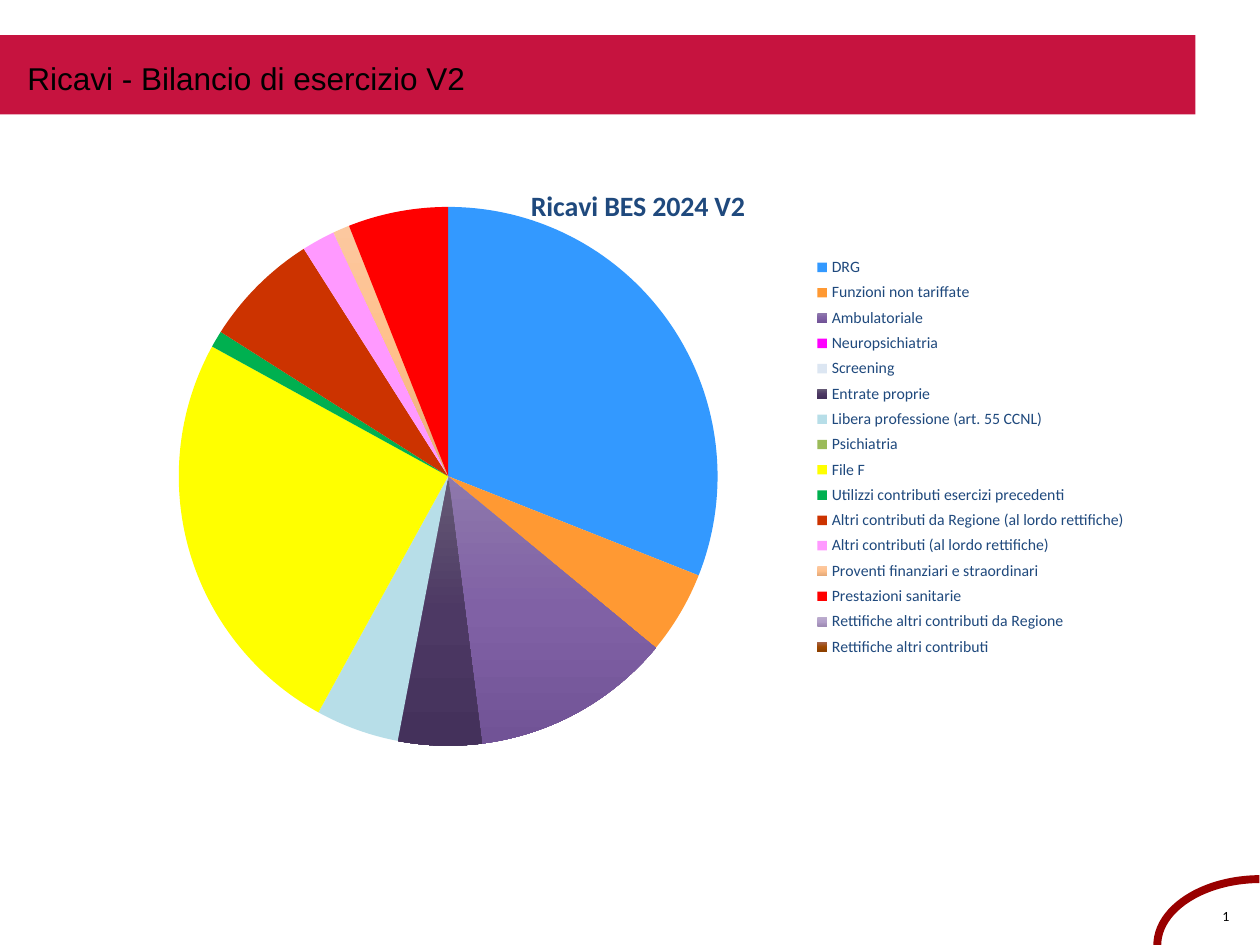
from lxml import etree
from pptx import Presentation
from pptx import util as u
from pptx.chart.data import CategoryChartData
from pptx.dml.color import RGBColor
from pptx.enum import chart as ch, shapes, text
from pptx.oxml import parse_xml
from pptx.oxml.ns import nsdecls, qn

COLOURS = {
    "banner": "C6133F",
    "arc": "990000",
    "text": "000000",
    "chart_text": "1F497D",
    "background": "FFFFFF",
}

# Category, value, slice colour (three colours make a vertical gradient)
REVENUES = [
    ("DRG", 31, "3399FF"),
    ("Funzioni non tariffate", 5, "FF9933"),
    ("Ambulatoriale", 12, ("8E78AC", "8061A5", "715396")),
    ("Neuropsichiatria", 0, "FF00FF"),
    ("Screening", 0, "DCE6F2"),
    ("Entrate proprie", 5, ("665B76", "4D3964", "44315B")),
    ("Libera professione (art. 55 CCNL)", 5, "B7DEE8"),
    ("Psichiatria", 0, "9BBB59"),
    ("File F", 25, "FFFF00"),
    ("Utilizzi contributi esercizi precedenti", 1, "00B050"),
    ("Altri contributi da Regione (al lordo rettifiche)", 7, "CC3300"),
    ("Altri contributi (al lordo rettifiche)", 2, "FF99FF"),
    ("Proventi finanziari e straordinari", 1, ("FCC89F", "FFC08B", "E5AA79")),
    ("Prestazioni sanitarie", 6, "FF0000"),
    ("Rettifiche altri contributi da Regione", 0, ("BCADCE", "B3A0C9", "9F8CB5")),
    ("Rettifiche altri contributi", 0, ("A5634B", "9E4800", "8D4000")),
]


def rgb(name):
    return RGBColor.from_string(COLOURS[name])


def place(shape, left, top, width, height):
    shape.left, shape.top = u.Cm(left), u.Cm(top)
    shape.width, shape.height = u.Cm(width), u.Cm(height)


def style_font(font, name, size, colour, bold=False):
    font.name, font.size, font.bold = name, u.Pt(size), bold
    font.color.rgb = rgb(colour)


def add_banner(slide):
    banner = slide.shapes.add_shape(
        shapes.MSO_SHAPE.RECTANGLE, 0, u.Cm(0.71), u.Cm(24.1), u.Cm(1.6))
    banner.shadow.inherit = False
    banner.fill.solid()
    banner.fill.fore_color.rgb = rgb("banner")
    banner.line.fill.background()
    # Lay the banner beneath the title placeholder
    slide.shapes._spTree.insert(2, banner._element)


def write_title(slide, wording):
    title = slide.shapes.title
    place(title, 0.3, 1.07, 15.8, 1.8)
    frame = title.text_frame
    frame.vertical_anchor = text.MSO_ANCHOR.TOP
    frame.auto_size = text.MSO_AUTO_SIZE.NONE
    heading = frame.paragraphs[0]
    heading.alignment = text.PP_ALIGN.LEFT
    run = heading.add_run()
    run.text = wording
    style_font(run.font, "Arial", 18, "text")


def add_corner_arc(slide):
    arc = slide.shapes.add_shape(
        shapes.MSO_SHAPE.ARC, u.Cm(24.08), u.Cm(16.97), u.Cm(2.67), u.Cm(4.17))
    arc.rotation = 270
    arc.adjustments[0], arc.adjustments[1] = 162, 215.34
    arc.shadow.inherit = False
    arc.fill.background()
    arc.line.color.rgb = rgb("arc")
    arc.line.width = u.Pt(4.5)


def add_page_number(slide, number):
    box = slide.shapes.add_textbox(u.Cm(24.31), u.Cm(18.24), u.Cm(0.81), u.Cm(0.41))
    frame = box.text_frame
    frame.word_wrap = True
    frame.margin_left = frame.margin_right = frame.margin_bottom = 0
    frame.margin_top = u.Cm(0.08)
    paragraph = frame.paragraphs[0]
    paragraph.alignment = text.PP_ALIGN.CENTER
    paragraph.line_spacing = 0.93
    run = paragraph.add_run()
    run.text = number
    style_font(run.font, "Calibri", 8, "text")


def set_layout(element, after=None, inner=False, **fractions):
    """Fix a chart part at fractions (x, y, w, h) of the chart area."""
    for old in element.findall(qn("c:layout")):
        element.remove(old)
    layout = parse_xml(f"<c:layout {nsdecls('c')}><c:manualLayout/></c:layout>")
    settings = {"layoutTarget": "inner"} if inner else {}
    settings.update(xMode="edge", yMode="edge", **fractions)
    for tag, value in settings.items():
        etree.SubElement(layout[0], qn(f"c:{tag}")).set("val", str(value))
    position = 0 if after is None else element.index(element.find(qn(after))) + 1
    element.insert(position, layout)


def fill_slice(point, colour):
    if isinstance(colour, str):
        point.format.fill.solid()
        point.format.fill.fore_color.rgb = RGBColor.from_string(colour)
        return
    stops = "".join(
        f'<a:gs pos="{i * 50000}"><a:srgbClr val="{stop}"/></a:gs>'
        for i, stop in enumerate(colour))
    point.format._element.get_or_add_spPr().append(parse_xml(
        f"<a:gradFill {nsdecls('a')}><a:gsLst>{stops}</a:gsLst>"
        '<a:lin ang="5400000" scaled="0"/></a:gradFill>'))


def add_revenue_pie(slide, heading):
    categories, values, colours = zip(*REVENUES)
    data = CategoryChartData()
    data.categories = categories
    data.add_series("Series 1", values)
    pie = slide.shapes.add_chart(
        ch.XL_CHART_TYPE.PIE, u.Cm(2.26), u.Cm(3.15), u.Cm(20.85), u.Cm(12.78), data).chart
    style_font(pie.font, "Calibri", 10, "text")
    pie._chartSpace.find(qn("c:chart")).addnext(parse_xml(
        f"<c:spPr {nsdecls('c', 'a')}><a:solidFill>"
        f'<a:srgbClr val="{COLOURS["background"]}"/></a:solidFill>'
        "<a:ln><a:noFill/></a:ln></c:spPr>"))

    pie.has_title = True
    run = pie.chart_title.text_frame.paragraphs[0].add_run()
    run.text = heading
    style_font(run.font, "Calibri", 16, "chart_text", bold=True)
    set_layout(pie.chart_title._element, "c:tx", x=0.4, y=0.04)

    pie.has_legend = True
    pie.legend.position = ch.XL_LEGEND_POSITION.RIGHT
    pie.legend.include_in_layout = False
    style_font(pie.legend.font, "Calibri", 9, "chart_text")
    set_layout(pie.legend._element, "c:legendPos", x=0.67, y=0.15, w=0.32, h=0.65)

    plot = pie.plots[0]
    plot.vary_by_categories = True
    set_layout(plot._element.getparent(), inner=True, x=0.03, y=0.08, w=0.59, h=0.85)
    for index, colour in enumerate(colours):
        fill_slice(plot.series[0].points[index], colour)


def main():
    deck = Presentation()
    deck.slide_width, deck.slide_height = u.Cm(25.4), u.Cm(19.05)
    slide = deck.slides.add_slide(deck.slide_layouts[5])
    add_banner(slide)
    write_title(slide, "Ricavi - Bilancio di esercizio V2")
    add_corner_arc(slide)
    add_page_number(slide, "1")
    add_revenue_pie(slide, "Ricavi BES 2024 V2")
    deck.save("out.pptx")


if __name__ == "__main__":
    main()
